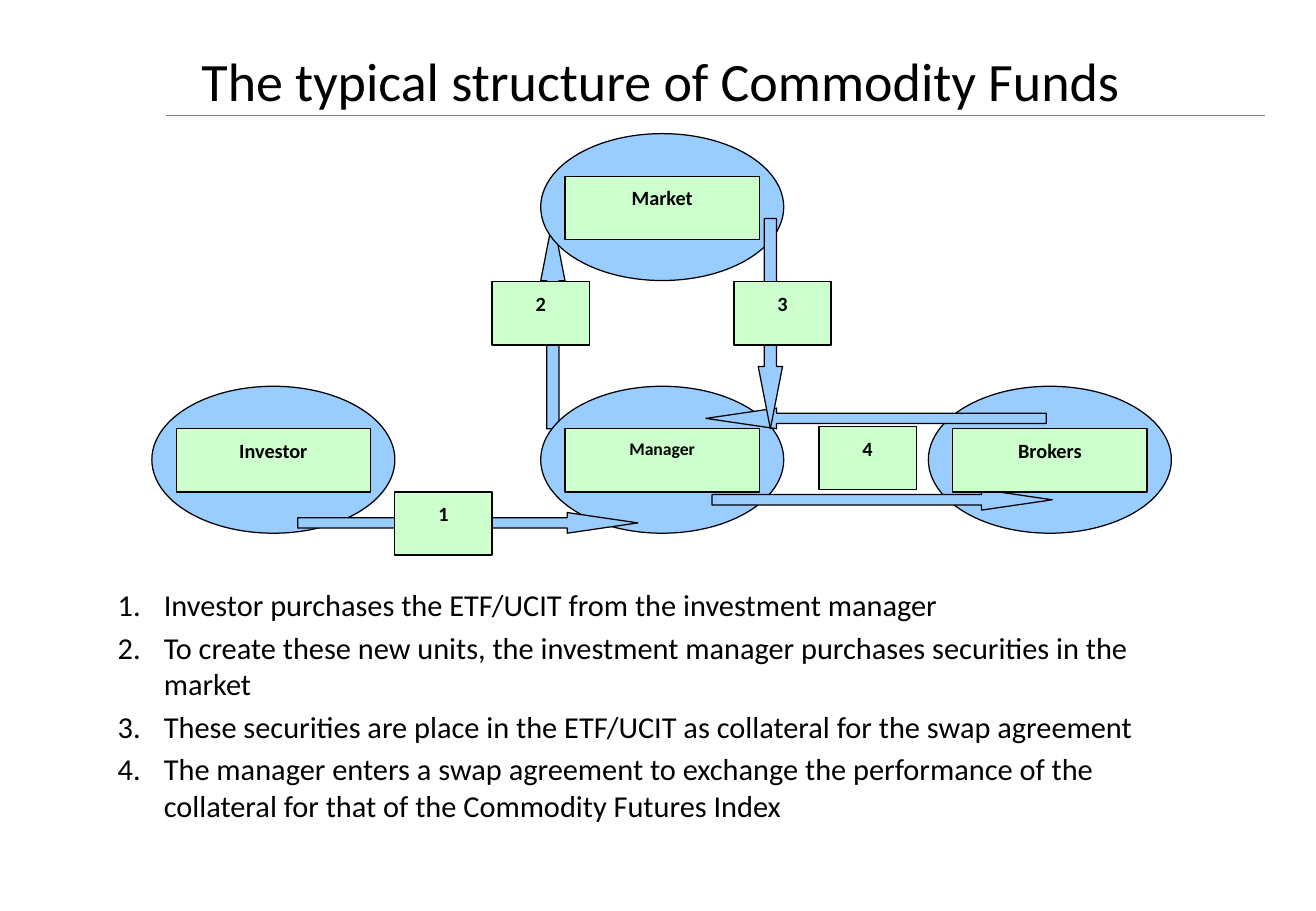
from pptx import Presentation
from pptx.dml.color import RGBColor
from pptx.enum.shapes import MSO_CONNECTOR as CONN, MSO_SHAPE as SHAPE
from pptx.enum.text import MSO_ANCHOR as ANCHOR, PP_ALIGN as ALIGN
from pptx.util import Inches, Pt
from lxml.etree import SubElement
from pptx.oxml.ns import qn

COLORS = {"text": "000000", "blue": "99CCFF", "green": "CCFFCC", "rule": "808080"}


def rgb(name):
    return RGBColor.from_string(COLORS[name])


def write(p, text, size=12, bold=False, align=ALIGN.LEFT, before=0, after=0, spacing=1.0):
    p.alignment = align
    p.space_before, p.space_after = Pt(before), Pt(after)
    p.line_spacing = spacing
    r = p.add_run()
    r.text = text
    r.font.name, r.font.size, r.font.bold = "Calibri", Pt(size), bold
    r.font.color.rgb = rgb("text")


class Deck:
    def __init__(self, width, height):
        self.prs = Presentation()
        self.prs.slide_width, self.prs.slide_height = Inches(width), Inches(height)
        self.slide = self.prs.slides.add_slide(self.prs.slide_layouts[6])
        self.shapes = self.slide.shapes

    def shape(self, kind, x, y, w, h, fill):
        sp = self.shapes.add_shape(kind, Inches(x), Inches(y), Inches(w), Inches(h))
        sp.shadow.inherit = False
        sp.fill.solid()
        sp.fill.fore_color.rgb = rgb(fill)
        sp.line.color.rgb = rgb("text")
        sp.line.width = Pt(0.75)
        return sp

    def arrow(self, kind, x, y, w, h, head):
        sp = self.shape(kind, x, y, w, h, "blue")
        sp.adjustments[0], sp.adjustments[1] = 0.5, head

    def ellipse(self, x, y):
        self.shape(SHAPE.OVAL, x, y, 2, 1.21, "blue")

    def label(self, text, x, y, w, size=12):
        tf = self.shape(SHAPE.RECTANGLE, x, y, w, 0.52, "green").text_frame
        tf.word_wrap = True
        tf.vertical_anchor = ANCHOR.TOP
        write(tf.paragraphs[0], text, size, True, ALIGN.CENTER, after=10, spacing=1.15)

    def rule(self, x1, x2, y):
        line = self.shapes.add_connector(CONN.STRAIGHT, Inches(x1), Inches(y), Inches(x2), Inches(y))
        line.line.color.rgb = rgb("rule")
        line.line.width = Pt(0.5)
        SubElement(line._element.spPr, qn("a:effectLst"))

    def text(self, x, y, w, h, anchor=ANCHOR.TOP):
        tf = self.shapes.add_textbox(Inches(x), Inches(y), Inches(w), Inches(h)).text_frame
        tf.word_wrap = True
        tf.vertical_anchor = anchor
        return tf

    def title(self, text, x, y, w, h):
        write(self.text(x, y, w, h, ANCHOR.MIDDLE).paragraphs[0], text, 32)

    def numbered(self, items, x, y, w, h):
        tf = self.text(x, y, w, h)
        for i, item in enumerate(items):
            p = tf.paragraphs[0] if i == 0 else tf.add_paragraph()
            pPr = p._p.get_or_add_pPr()
            pPr.set("marL", str(Inches(0.38)))
            pPr.set("indent", str(-Inches(0.38)))
            SubElement(pPr, qn("a:buFont"), typeface="+mj-lt")
            SubElement(pPr, qn("a:buAutoNum"), type="arabicPeriod")
            write(p, item, 18, before=3.6 if i else 0)


PARTIES = [
    ("Investor", 1.25, 3.18, 12),
    ("Manager", 4.45, 3.18, 10.5),
    ("Brokers", 7.64, 3.18, 12),
    ("Market", 4.45, 1.1, 12),
]
FLOWS = [
    (SHAPE.RIGHT_ARROW, 2.45, 4.22, 2.8, 0.17, 3.42),
    (SHAPE.RIGHT_ARROW, 5.86, 4.03, 2.8, 0.17, 3.42),
    (SHAPE.LEFT_ARROW, 5.81, 3.36, 2.8, 0.17, 3.42),
    (SHAPE.DOWN_ARROW, 6.24, 1.8, 0.2, 1.73, 2.56),
]
STEPS = [("1", 3.25, 4.05), ("2", 4.05, 2.32), ("3", 6.04, 2.32), ("4", 6.74, 3.51)]
NOTES = [
    "Investor purchases the ETF/UCIT from the investment manager",
    "To create these new units, the investment manager purchases securities in the market",
    "These securities are place in the ETF/UCIT as collateral for the swap agreement",
    "The manager enters a swap agreement to exchange the performance of the "
    "collateral for that of the Commodity Futures Index",
]


def main():
    deck = Deck(10.83, 7.5)
    deck.rule(1.37, 10.41, 0.95)
    deck.title("The typical structure of Commodity Funds", 1.56, 0.29, 8.46, 0.74)
    deck.arrow(SHAPE.UP_ARROW, 4.45, 1.8, 0.2, 1.73, 2.56)
    for name, x, y, size in PARTIES:
        deck.ellipse(x, y)
    for flow in FLOWS:
        deck.arrow(*flow)
    for number, x, y in STEPS:
        deck.label(number, x, y, 0.8)
    for name, x, y, size in PARTIES:
        deck.label(name, x + 0.2, y + 0.35, 1.6, size)
    deck.numbered(NOTES, 0.87, 4.78, 9.2, 2.49)
    deck.prs.save("out.pptx")


if __name__ == "__main__":
    main()
